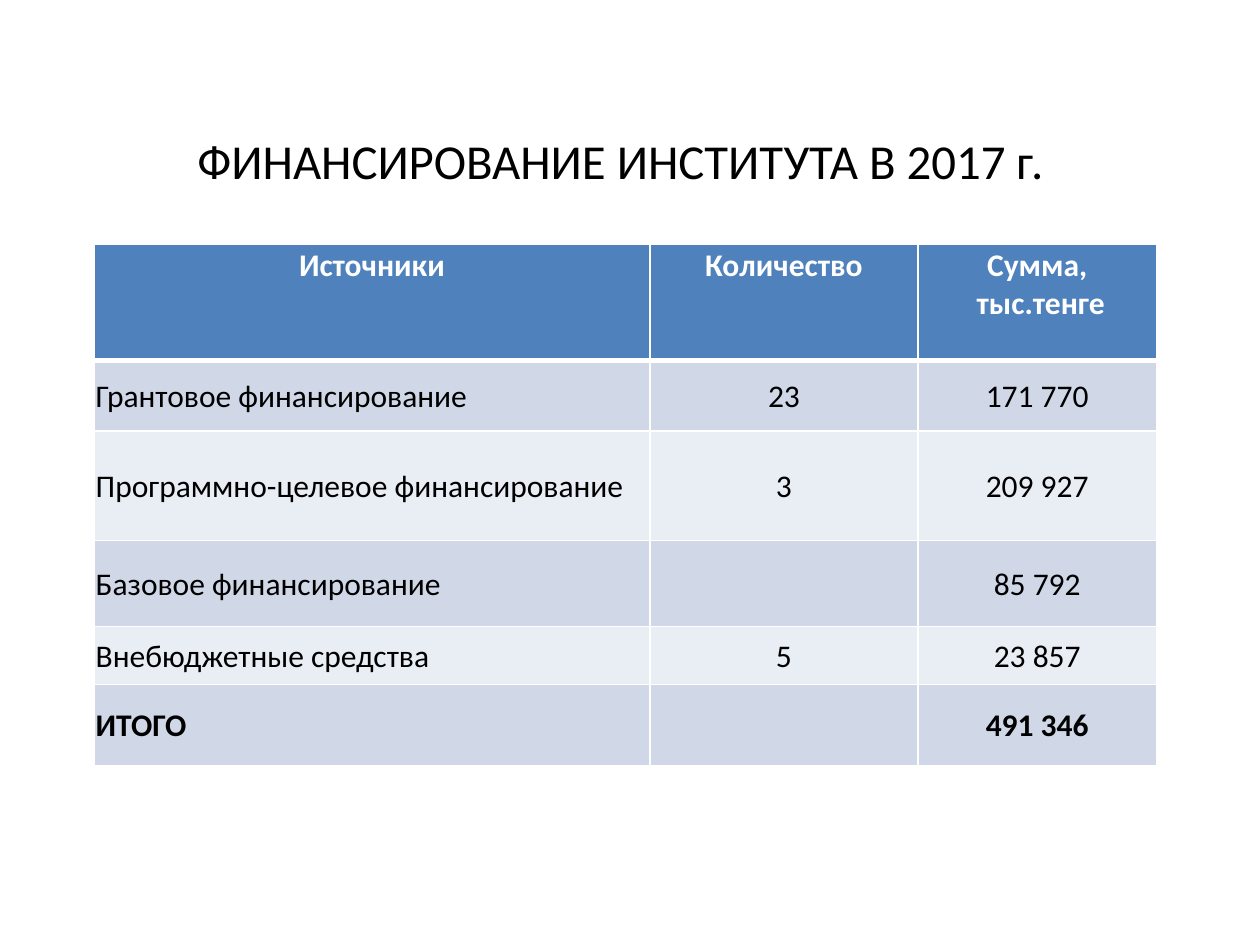
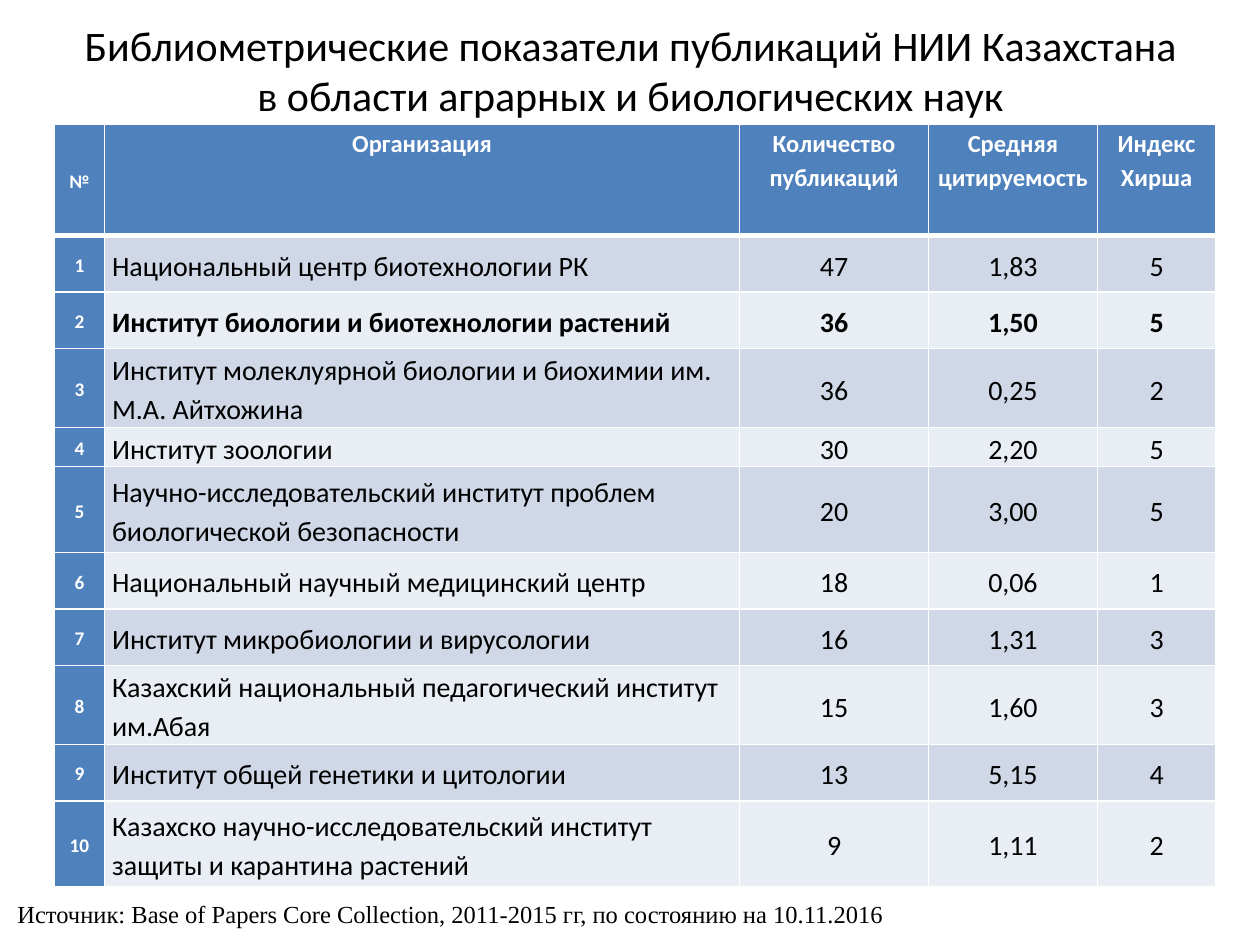
from lxml import etree
from pptx import Presentation
from pptx.dml.color import RGBColor
from pptx.enum import text
from pptx.oxml import ns
from pptx.util import Cm, Pt

HEAD, BANDS = "4F81BD", ("D0D8E8", "E9EDF4")
WHITE, BLACK = "FFFFFF", "000000"
FONT, NOTE_FONT = "Calibri", "Times New Roman"
CENTER, LEFT = text.PP_ALIGN.CENTER, text.PP_ALIGN.LEFT
MIDDLE, TOP = text.MSO_ANCHOR.MIDDLE, text.MSO_ANCHOR.TOP


def style(para, size, color=BLACK, bold=False, name=FONT, align=CENTER):
    para.alignment = align
    font = para.font
    font.name, font.size, font.bold = name, Pt(size), bold
    font.color.rgb = RGBColor.from_string(color)


def border(cell, side, width):
    line = etree.SubElement(cell._tc.get_or_add_tcPr(), ns.qn(f"a:ln{side}"), w=str(Pt(width)))
    fill = etree.SubElement(line, ns.qn("a:solidFill"))
    etree.SubElement(fill, ns.qn("a:srgbClr"), val=WHITE)


# Contents of the two slides, lengths in centimetres
slides = [
    {
        "title": "ФИНАНСИРОВАНИЕ ИНСТИТУТА В 2017 г.",
        "title_size": 27.9,
        "title_box": (2.31, 2.32, 20.4, 1.8),
        "table_at": (1.9, 4.93),
        "columns": (11.2, 5.41, 4.8),
        "heights": (2.34, 1.42, 2.21, 1.73, 1.17, 1.63),
        "margins": (0.03, 0.03),
        "sizes": (18, 18),
        "spacing": 1.0,
        "numbered": False,
        "bold_row": 5,
        "rows": [
            ("Источники", "Количество", "Сумма,\n тыс.тенге"),
            ("Грантовое финансирование", "23", "171 770"),
            ("Программно-целевое финансирование", "3", "209 927"),
            ("Базовое финансирование", "", "85 792"),
            ("Внебюджетные средства", "5", "23 857"),
            ("ИТОГО", "", "491 346"),
        ],
    },
    {
        "title": "Библиометрические показатели публикаций НИИ Казахстана "
                 "в области аграрных и биологических наук",
        "title_size": 24,
        "title_box": (1.3, 0.33, 22.83, 2.16),
        "table_at": (1.09, 2.51),
        "columns": (1.02, 12.8, 3.81, 3.4, 2.39),
        "heights": (2.24, 1.14, 1.14, 1.5, 0.76, 1.73, 1.14, 1.14, 1.5, 1.14, 1.73),
        "margins": (0.15, 0),
        "sizes": (14, 16),
        "spacing": 1.15,
        "numbered": True,
        "bold_row": 2,
        "rows": [
            ("№", "Организация", "Количество публикаций", "Средняя цитируемость",
             "Индекс\nХирша"),
            ("1", "Национальный центр биотехнологии РК", "47", "1,83", "5"),
            ("2", "Институт биологии и биотехнологии растений", "36", "1,50", "5"),
            ("3", "Институт молеклуярной биологии и биохимии им. М.А. Айтхожина",
             "36", "0,25", "2"),
            ("4", "Институт зоологии", "30", "2,20", "5"),
            ("5", "Научно-исследовательский институт проблем биологической безопасности",
             "20", "3,00", "5"),
            ("6", "Национальный научный медицинский центр", "18", "0,06", "1"),
            ("7", "Институт микробиологии и вирусологии", "16", "1,31", "3"),
            ("8", "Казахский национальный педагогический институт им.Абая",
             "15", "1,60", "3"),
            ("9", "Институт общей генетики и цитологии", "13", "5,15", "4"),
            ("10", "Казахско научно-исследовательский институт защиты и карантина растений",
             "9", "1,11", "2"),
        ],
    },
]

deck = Presentation()
deck.slide_width, deck.slide_height = Cm(25.4), Cm(19.05)

for content in slides:
    page = deck.slides.add_slide(deck.slide_layouts[5])

    # Title
    title = page.shapes.title
    title.left, title.top, title.width, title.height = map(Cm, content["title_box"])
    title.text_frame.text = content["title"]
    title.text_frame.auto_size = text.MSO_AUTO_SIZE.NONE
    title.text_frame.vertical_anchor = MIDDLE
    style(title.text_frame.paragraphs[0], content["title_size"])

    # Table grid
    columns, heights, rows = content["columns"], content["heights"], content["rows"]
    left, top = content["table_at"]
    table = page.shapes.add_table(len(rows), len(columns), Cm(left), Cm(top),
                                  Cm(sum(columns)), Cm(sum(heights))).table
    for column, width in zip(table.columns, columns):
        column.width = Cm(width)
    for row, height in zip(table.rows, heights):
        row.height = Cm(height)

    # Table cells
    head_size, body_size = content["sizes"]
    side_margin, top_margin = content["margins"]
    name_column = 1 if content["numbered"] else 0
    for r, values in enumerate(rows):
        for c, value in enumerate(values):
            cell = table.cell(r, c)
            number = content["numbered"] and c == 0
            header = r == 0 or number
            for side in "LRTB":
                thick = (r, side) in ((0, "B"), (1, "T"))
                border(cell, side, 3 if thick else 1)
            cell.fill.solid()
            cell.fill.fore_color.rgb = RGBColor.from_string(HEAD if header else BANDS[(r - 1) % 2])
            cell.margin_left = cell.margin_right = Cm(side_margin)
            cell.margin_top, cell.margin_bottom = Cm(top_margin), 0
            cell.vertical_anchor = TOP if r == 0 and not number else MIDDLE
            cell.text = value
            size = 11 if number else head_size if header else body_size
            align = LEFT if r > 0 and c == name_column else CENTER
            for para in cell.text_frame.paragraphs:
                style(para, size, WHITE if header else BLACK,
                      header or r == content["bold_row"], align=align)
                para.line_spacing = content["spacing"]

# Source note on the last slide
note = page.shapes.add_textbox(Cm(0.1), Cm(17.78), Cm(25.3), Cm(1.27)).text_frame
note.word_wrap = True
note.vertical_anchor = MIDDLE
note.text = "Источник: Base of Papers Core Collection, 2011-2015 гг, по состоянию на 10.11.2016"
style(note.paragraphs[0], 14, name=NOTE_FONT, align=text.PP_ALIGN.JUSTIFY)

deck.save("out.pptx")
